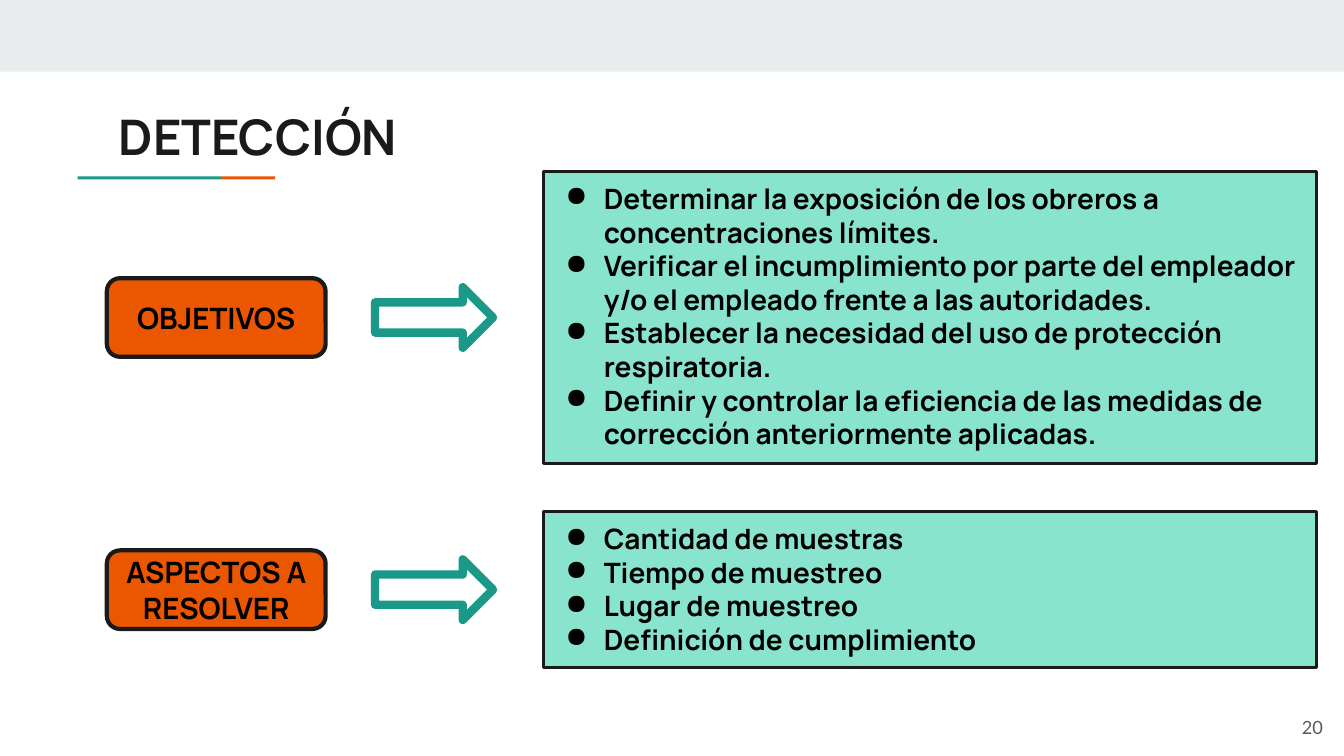
from dataclasses import dataclass

from lxml import etree
from pptx import Presentation
from pptx.dml.color import RGBColor
from pptx.enum.shapes import MSO_SHAPE
from pptx.enum.text import MSO_ANCHOR, MSO_AUTO_SIZE, PP_ALIGN
from pptx.oxml.ns import qn
from pptx.util import Inches, Pt

RECT = MSO_SHAPE.RECTANGLE
ROUNDED = MSO_SHAPE.ROUNDED_RECTANGLE
ARROW = MSO_SHAPE.RIGHT_ARROW
LEFT, CENTER, RIGHT = PP_ALIGN.LEFT, PP_ALIGN.CENTER, PP_ALIGN.RIGHT
TOP, MIDDLE = MSO_ANCHOR.TOP, MSO_ANCHOR.MIDDLE

WHITE = RGBColor(0xFF, 0xFF, 0xFF)
BLACK = RGBColor(0x00, 0x00, 0x00)
INK = RGBColor(0x1A, 0x1A, 0x1A)
GRAY = RGBColor(0x59, 0x59, 0x59)
BAND = RGBColor(0xE9, 0xED, 0xEE)
ORANGE = RGBColor(0xEB, 0x56, 0x00)
TEAL = RGBColor(0x1A, 0x99, 0x88)
MINT = RGBColor(0x89, 0xE4, 0xCD)


@dataclass
class Topic:
    label: str
    middle: float
    panel_height: float
    points: list[str]


TOPICS = [
    Topic("OBJETIVOS", 3.15, 2.9, [
        "Determinar la exposición de los obreros a concentraciones límites.",
        "Verificar el incumplimiento por parte del empleador y/o el empleado "
        "frente a las autoridades.",
        "Establecer la necesidad del uso de protección respiratoria.",
        "Definir y controlar la eficiencia de las medidas de corrección "
        "anteriormente aplicadas.",
    ]),
    Topic("ASPECTOS A RESOLVER", 5.85, 1.55, [
        "Cantidad de muestras",
        "Tiempo de muestreo",
        "Lugar de muestreo",
        "Definición de cumplimiento",
    ]),
]


def add_box(slide, kind, left: float, top: float, width: float, height: float,
            fill: RGBColor | None = None, line: RGBColor | None = None,
            weight: float = 1):
    sp = slide.shapes.add_shape(kind, Inches(left), Inches(top),
                                Inches(width), Inches(height))
    sp.shadow.inherit = False
    if fill is None:
        sp.fill.background()
    else:
        sp.fill.solid()
        sp.fill.fore_color.rgb = fill
    if line is None:
        sp.line.fill.background()
    else:
        sp.line.color.rgb = line
        sp.line.width = Pt(weight)
        etree.SubElement(sp.line._get_or_add_ln(), qn("a:round"))
    return sp


def set_frame(tf, anchor, inset_x: float = 0.1, inset_y: float = 0.1) -> None:
    tf.word_wrap = True
    tf.vertical_anchor = anchor
    tf.margin_left = tf.margin_right = Inches(inset_x)
    tf.margin_top = tf.margin_bottom = Inches(inset_y)


def format_paragraph(p, size: float, color: RGBColor, align,
                     font: str = "Manrope", bold: bool = True) -> None:
    p.alignment = align
    for r in p.runs:
        r.font.name = font
        r.font.size = Pt(size)
        r.font.bold = bold
        r.font.color.rgb = color


def add_bullet(p) -> None:
    pPr = p._p.get_or_add_pPr()
    pPr.set("marL", str(Inches(0.5)))
    pPr.set("indent", str(Inches(-0.38)))
    color = etree.SubElement(pPr, qn("a:buClr"))
    etree.SubElement(color, qn("a:srgbClr")).set("val", str(BLACK))
    etree.SubElement(pPr, qn("a:buChar")).set("char", "●")


def add_topic(slide, topic: Topic) -> None:
    """Draw a label, its arrow and its panel, all centred on one height."""
    label = add_box(slide, ROUNDED, 1.06, topic.middle - 0.39, 2.17, 0.78,
                    ORANGE, INK, 3)
    tf = label.text_frame
    set_frame(tf, MIDDLE)
    tf.text = topic.label
    format_paragraph(tf.paragraphs[0], 21, BLACK, CENTER)

    add_box(slide, ARROW, 3.72, topic.middle - 0.3, 1.17, 0.6,
            line=TEAL, weight=6)

    panel = add_box(slide, RECT, 5.39, topic.middle - topic.panel_height / 2,
                    7.67, topic.panel_height, MINT, INK, 2.25)
    tf = panel.text_frame
    set_frame(tf, TOP)
    tf.auto_size = MSO_AUTO_SIZE.SHAPE_TO_FIT_TEXT
    tf.text = "\n".join(topic.points)
    for p in tf.paragraphs:
        add_bullet(p)
        format_paragraph(p, 20, BLACK, LEFT)


def add_title(slide, text: str) -> None:
    title = slide.shapes.title
    title.left, title.top = Inches(0.28), Inches(0.91)
    title.width, title.height = Inches(4.56), Inches(0.96)
    tf = title.text_frame
    set_frame(tf, MIDDLE, inset_y=0.05)
    tf.text = text
    p = tf.paragraphs[0]
    p.line_spacing = 0.9
    format_paragraph(p, 35, INK, CENTER)


def add_page_number(slide, number: str) -> None:
    box = slide.shapes.add_textbox(Inches(12.45), Inches(6.93),
                                   Inches(0.8), Inches(0.57))
    tf = box.text_frame
    set_frame(tf, MIDDLE, 0.13, 0.13)
    tf.text = number
    format_paragraph(tf.paragraphs[0], 13, GRAY, RIGHT, "Lato", False)


def main() -> None:
    prs = Presentation()
    prs.slide_width, prs.slide_height = Inches(13.33), Inches(7.5)
    slide = prs.slides.add_slide(prs.slide_layouts[5])
    slide.background.fill.solid()
    slide.background.fill.fore_color.rgb = WHITE

    add_box(slide, RECT, 0, 0, 13.33, 0.71, BAND)
    add_box(slide, RECT, 2.19, 1.75, 0.54, 0.03, ORANGE)
    add_box(slide, RECT, 0.77, 1.75, 1.42, 0.03, TEAL)
    add_page_number(slide, "20")
    add_title(slide, "DETECCIÓN")
    for topic in TOPICS:
        add_topic(slide, topic)
    prs.save("out.pptx")


if __name__ == "__main__":
    main()
